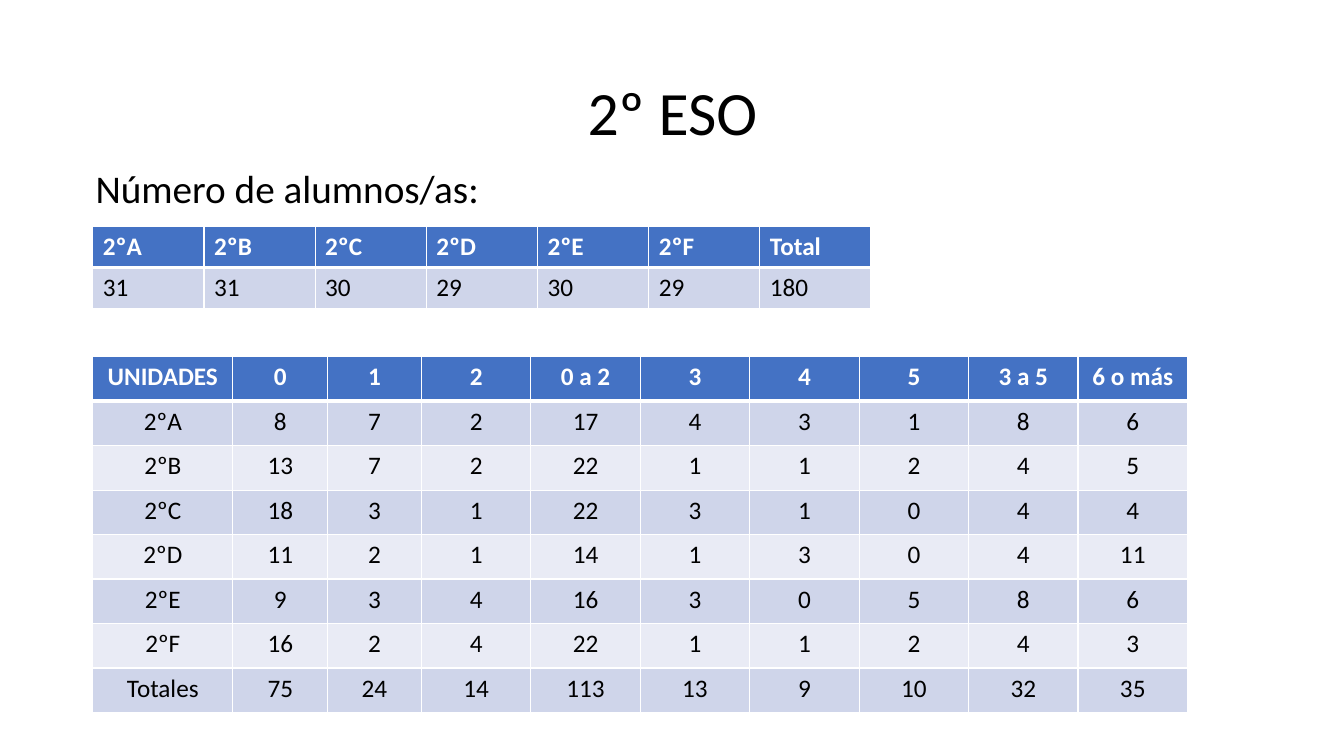
from dataclasses import dataclass
from typing import Optional

from lxml import etree
from pptx import Presentation
from pptx import util as u
from pptx.dml import color
from pptx.enum import text
from pptx.oxml import ns


@dataclass(frozen=True)
class Theme:
    font: str = "Calibri"
    black: str = "000000"
    white: str = "FFFFFF"
    header: str = "4472C4"
    bands: tuple[str, str] = ("CFD5EA", "E9EBF5")
    title_size: int = 44
    body_size: int = 28
    table_size: int = 18
    thin_line: int = 1
    thick_line: int = 3


@dataclass(frozen=True)
class Caption:
    words: str
    left: float
    top: float
    width: float
    height: float
    size: int
    align: text.PP_ALIGN
    anchor: text.MSO_ANCHOR
    line_spacing: float = 1.0


@dataclass(frozen=True)
class Grid:
    left: float
    top: float
    widths: list[float]
    height: float
    rows: list[list[str]]
    align: text.PP_ALIGN
    anchor: Optional[text.MSO_ANCHOR] = None


THEME = Theme()

CAPTIONS = [
    Caption("2º ESO", 0.92, 0.42, 11.5, 1.45, THEME.title_size,
            text.PP_ALIGN.CENTER, text.MSO_ANCHOR.MIDDLE, 0.9),
    Caption("Número de alumnos/as:", 0.85, 1.58, 11.33, 0.6, THEME.body_size,
            text.PP_ALIGN.LEFT, text.MSO_ANCHOR.TOP),
]

STUDENTS = [
    ["2ºA", "2ºB", "2ºC", "2ºD", "2ºE", "2ºF", "Total"],
    ["31", "31", "30", "29", "30", "29", "180"],
]

FAILED_SUBJECTS = [
    ["UNIDADES", "0", "1", "2", "0 a 2", "3", "4", "5", "3 a 5", "6 o más"],
    ["2ºA", "8", "7", "2", "17", "4", "3", "1", "8", "6"],
    ["2ºB", "13", "7", "2", "22", "1", "1", "2", "4", "5"],
    ["2ºC", "18", "3", "1", "22", "3", "1", "0", "4", "4"],
    ["2ºD", "11", "2", "1", "14", "1", "3", "0", "4", "11"],
    ["2ºE", "9", "3", "4", "16", "3", "0", "5", "8", "6"],
    ["2ºF", "16", "2", "4", "22", "1", "1", "2", "4", "3"],
    ["Totales", "75", "24", "14", "113", "13", "9", "10", "32", "35"],
]

GRIDS = [
    Grid(0.92, 2.25, [7.72 / 7] * 7, 0.81, STUDENTS,
         text.PP_ALIGN.LEFT, text.MSO_ANCHOR.MIDDLE),
    Grid(0.92, 3.54, [1.39, 0.94, 0.93] + [7.6 / 7] * 7, 3.53, FAILED_SUBJECTS,
         text.PP_ALIGN.CENTER),
]


def style_paragraph(para, size: int, ink: str, align: text.PP_ALIGN, bold: bool = False) -> None:
    para.alignment = align
    para.font.name = THEME.font
    para.font.size = u.Pt(size)
    para.font.bold = bold
    para.font.color.rgb = color.RGBColor.from_string(ink)


def draw_caption(page, caption: Caption) -> None:
    box = page.shapes.add_textbox(u.Inches(caption.left), u.Inches(caption.top),
                                  u.Inches(caption.width), u.Inches(caption.height))
    frame = box.text_frame
    frame.word_wrap = True
    frame.vertical_anchor = caption.anchor
    frame.text = caption.words
    para = frame.paragraphs[0]
    para.line_spacing = caption.line_spacing
    style_paragraph(para, caption.size, THEME.black, caption.align)


def add_borders(cell, bottom_width: int) -> None:
    properties = cell._tc.get_or_add_tcPr()
    for side in "LRTB":
        width = bottom_width if side == "B" else THEME.thin_line
        line = etree.SubElement(properties, ns.qn(f"a:ln{side}"), w=str(u.Pt(width)))
        fill = etree.SubElement(line, ns.qn("a:solidFill"))
        etree.SubElement(fill, ns.qn("a:srgbClr"), val=THEME.white)


def draw_grid(page, grid: Grid) -> None:
    table = page.shapes.add_table(
        len(grid.rows), len(grid.widths), u.Inches(grid.left), u.Inches(grid.top),
        u.Inches(sum(grid.widths)), u.Inches(grid.height)).table
    for column, width in zip(table.columns, grid.widths):
        column.width = u.Inches(width)
    for row_index, values in enumerate(grid.rows):
        is_header = row_index == 0
        background = THEME.header if is_header else THEME.bands[(row_index - 1) % 2]
        for column_index, value in enumerate(values):
            cell = table.cell(row_index, column_index)
            add_borders(cell, THEME.thick_line if is_header else THEME.thin_line)
            cell.fill.solid()
            cell.fill.fore_color.rgb = color.RGBColor.from_string(background)
            cell.vertical_anchor = grid.anchor
            cell.text = value
            style_paragraph(cell.text_frame.paragraphs[0], THEME.table_size,
                            THEME.white if is_header else THEME.black,
                            grid.align, is_header)


def main() -> None:
    deck = Presentation()
    deck.slide_width = u.Inches(13.33)
    deck.slide_height = u.Inches(7.5)
    page = deck.slides.add_slide(deck.slide_layouts[6])
    for caption in CAPTIONS:
        draw_caption(page, caption)
    for grid in GRIDS:
        draw_grid(page, grid)
    deck.save("out.pptx")


if __name__ == "__main__":
    main()
